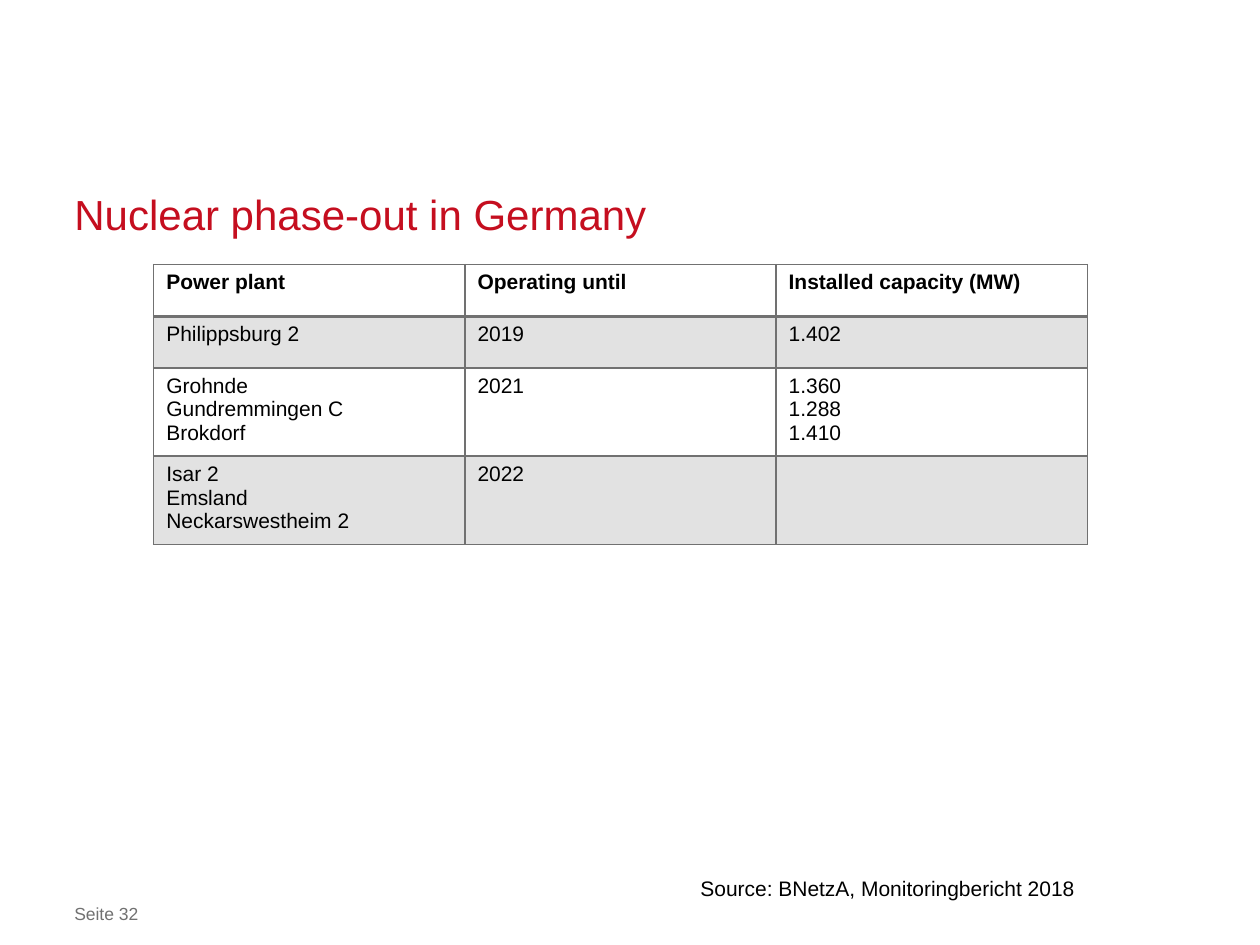
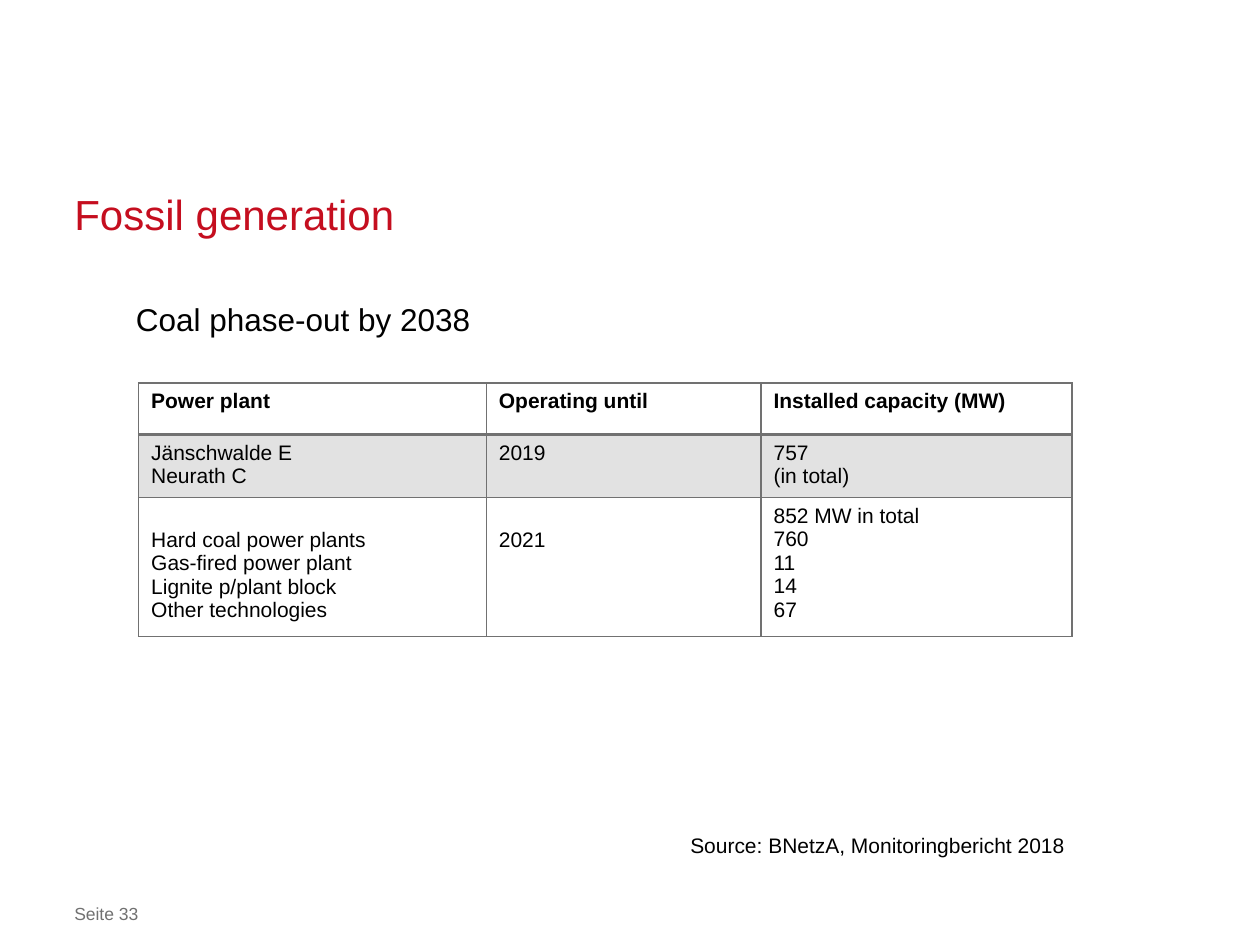
from dataclasses import dataclass
from typing import Any

from lxml import etree
from pptx import Presentation
from pptx.dml.color import RGBColor
from pptx.enum.text import MSO_ANCHOR, MSO_AUTO_SIZE, PP_ALIGN
from pptx.oxml.ns import qn
from pptx.util import Inches, Pt

LEFT, RIGHT = PP_ALIGN.LEFT, PP_ALIGN.RIGHT
TOP, BOTTOM = MSO_ANCHOR.TOP, MSO_ANCHOR.BOTTOM
GROW, FIXED = MSO_AUTO_SIZE.SHAPE_TO_FIT_TEXT, MSO_AUTO_SIZE.NONE

RED = RGBColor(0xC5, 0x0E, 0x1F)
BLACK = RGBColor(0x00, 0x00, 0x00)
GREY = RGBColor(0x71, 0x71, 0x71)
BAND = RGBColor(0xE2, 0xE2, 0xE2)

TITLE_FONT = {"name": "Arial", "size": Pt(24), "color": RED}
SUBTITLE_FONT = {"name": "Arial", "size": Pt(18), "color": BLACK}
BODY_FONT = {"name": "Arial", "size": Pt(12), "color": BLACK}
HEADER_FONT = BODY_FONT | {"bold": True}
FOOTER_FONT = {"name": "Arial", "size": Pt(10), "color": GREY}

TITLE_BOX = (0.59, 1.51, 8.82, 0.39)
FOOTER_BOX = (0.59, 7.17, 7.24, 0.17)
SUBTITLE_BOX = (0.98, 2.33, 4.65, 0.4)

HEADINGS = ("Power plant", "Operating until", "Installed capacity (MW)")
SOURCE = "Source: BNetzA, Monitoringbericht 2018"
LINE_HEIGHT = 0.19
CELL_MARGIN = 0.05


@dataclass(frozen=True)
class Row:
    cells: tuple[str, str, str]
    height: float = 0.41
    skipped_lines: tuple[int, int, int] = (0, 0, 0)


@dataclass(frozen=True)
class PlantSlide:
    page: int
    title: str
    table_at: tuple[float, float]
    columns: tuple[float, float, float]
    rows: tuple[Row, ...]
    source_at: tuple[float, float]
    subtitle: str = ""


SLIDES = (
    PlantSlide(
        page=32,
        title="Nuclear phase-out in Germany",
        table_at=(1.22, 2.1),
        columns=(2.47, 2.47, 2.47),
        rows=(
            Row(("Philippsburg 2", "2019", "1.402")),
            Row(("Grohnde\nGundremmingen C\nBrokdorf", "2021", "1.360\n1.288\n1.410"), 0.7),
            Row(("Isar 2\nEmsland\nNeckarswestheim 2", "2022", ""), 0.7),
        ),
        source_at=(5.24, 6.9),
    ),
    PlantSlide(
        page=33,
        title="Fossil generation",
        table_at=(1.1, 3.04),
        columns=(2.76, 2.18, 2.47),
        rows=(
            Row(("Jänschwalde E\nNeurath C", "2019", "757\n(in total)"), 0.5),
            Row(
                (
                    "Hard coal power plants\nGas-fired power plant\n"
                    "Lignite p/plant block\nOther technologies",
                    "2021",
                    "852 MW in total\n760\n11\n14\n67",
                ),
                1.1,
                (1, 1, 0),
            ),
        ),
        source_at=(5.16, 6.56),
        subtitle="Coal phase-out by 2038",
    ),
)


def write_text(text_frame: Any, text: str, font: dict[str, Any], alignment: Any = LEFT) -> None:
    text_frame.text = text
    for paragraph in text_frame.paragraphs:
        paragraph.alignment = alignment
        for name, value in font.items():
            if name == "color":
                paragraph.font.color.rgb = value
            else:
                setattr(paragraph.font, name, value)


def format_frame(text_frame: Any, anchor: Any, auto_size: Any, margin: float | None = None) -> None:
    settings = {"word_wrap": True, "vertical_anchor": anchor, "auto_size": auto_size}
    if margin is not None:
        sides = ("left", "top", "right", "bottom")
        settings |= {f"margin_{side}": Inches(margin) for side in sides}
    for name, value in settings.items():
        setattr(text_frame, name, value)


def add_title(slide: Any, text: str) -> None:
    title = slide.shapes.title
    for name, value in zip(("left", "top", "width", "height"), TITLE_BOX):
        setattr(title, name, Inches(value))
    format_frame(title.text_frame, BOTTOM, GROW, 0)
    write_text(title.text_frame, text, TITLE_FONT)
    title.text_frame.paragraphs[0].line_spacing = Pt(30)


def add_text(slide: Any, box: tuple[float, ...], text: str, font: dict[str, Any],
             alignment: Any = LEFT, auto_size: Any = GROW, margin: float | None = None) -> None:
    text_frame = slide.shapes.add_textbox(*map(Inches, box)).text_frame
    format_frame(text_frame, TOP, auto_size, margin)
    write_text(text_frame, text, font, alignment)


def set_borders(cell: Any, widths: dict[str, float]) -> None:
    """Draw grey cell borders; the schema wants them ahead of the fill, in L, R, T, B order."""
    properties = cell._tc.get_or_add_tcPr()
    for index, side in enumerate("LRTB"):
        line = etree.Element(qn(f"a:ln{side}"), w=str(Pt(widths.get(side, 1))))
        fill = etree.SubElement(line, qn("a:solidFill"))
        etree.SubElement(fill, qn("a:srgbClr"), val=str(GREY))
        properties.insert(index, line)


def add_plant_table(slide: Any, content: PlantSlide) -> None:
    rows = (Row(HEADINGS), *content.rows)
    size = (sum(content.columns), sum(row.height for row in rows))
    table = slide.shapes.add_table(
        len(rows), len(HEADINGS), *map(Inches, content.table_at + size)
    ).table
    table.first_row = table.horz_banding = False
    for column, width in zip(table.columns, content.columns):
        column.width = Inches(width)
    for row_index, row in enumerate(rows):
        table.rows[row_index].height = Inches(row.height)
        for column_index, text in enumerate(row.cells):
            cell = table.cell(row_index, column_index)
            skipped = row.skipped_lines[column_index]
            cell.margin_top = Inches(CELL_MARGIN + skipped * LINE_HEIGHT)
            write_text(cell.text_frame, text, BODY_FONT if row_index else HEADER_FONT)
            if row_index % 2:
                cell.fill.solid()
                cell.fill.fore_color.rgb = BAND
            else:
                cell.fill.background()
            set_borders(cell, {0: {"B": 2}, 1: {"T": 2}}.get(row_index, {}))


def add_plant_slide(presentation: Any, content: PlantSlide) -> None:
    slide = presentation.slides.add_slide(presentation.slide_layouts.get_by_name("Title Only"))
    add_plant_table(slide, content)
    add_text(slide, FOOTER_BOX, f"Seite {content.page}", FOOTER_FONT, auto_size=FIXED, margin=0)
    add_title(slide, content.title)
    add_text(slide, (*content.source_at, 3.39, 0.3), SOURCE, BODY_FONT, RIGHT)
    if content.subtitle:
        add_text(slide, SUBTITLE_BOX, content.subtitle, SUBTITLE_FONT)


def main() -> None:
    presentation = Presentation()
    presentation.slide_width = Inches(10)
    presentation.slide_height = Inches(7.5)
    for content in SLIDES:
        add_plant_slide(presentation, content)
    presentation.save("out.pptx")


if __name__ == "__main__":
    main()
